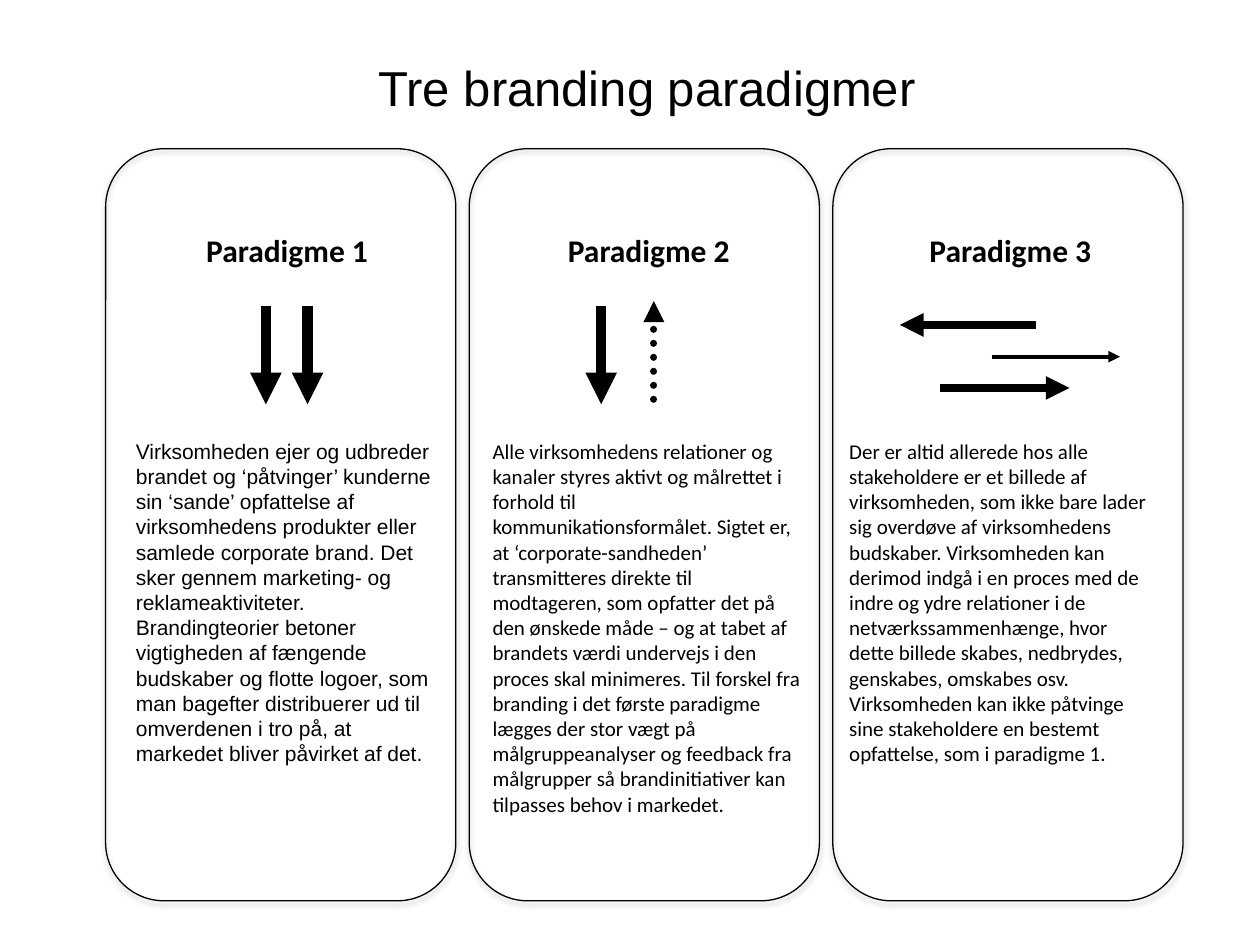
from lxml.etree import SubElement
from pptx import Presentation
from pptx.dml.color import RGBColor
from pptx.enum.dml import MSO_LINE
from pptx.enum.shapes import MSO_CONNECTOR, MSO_SHAPE
from pptx.enum.text import MSO_ANCHOR, PP_ALIGN
from pptx.oxml.ns import qn
from pptx.util import Cm, Pt

HUES = {"ink": "000000"}

TEXTS = [
    ("Arial", [
        "Virksomheden ejer og udbreder brandet og ‘påtvinger’ kunderne sin ‘sande’ "
        "opfattelse af virksomhedens produkter eller samlede corporate brand. Det sker "
        "gennem marketing- og reklameaktiviteter. Brandingteorier betoner vigtigheden "
        "af fængende budskaber og flotte logoer, som",
        "man bagefter distribuerer ud til omverdenen i tro på, at markedet bliver "
        "påvirket af det."]),
    ("Calibri", [
        "Alle virksomhedens relationer og kanaler styres aktivt og målrettet i forhold "
        "til kommunikationsformålet. Sigtet er, at ‘corporate-sandheden’ transmitteres "
        "direkte til modtageren, som opfatter det på den ønskede måde – og at tabet af "
        "brandets værdi undervejs i den proces skal minimeres. Til forskel fra branding "
        "i det første paradigme lægges der stor vægt på målgruppeanalyser og feedback "
        "fra målgrupper så brandinitiativer kan tilpasses behov i markedet."]),
    ("Calibri", [
        "Der er altid allerede hos alle stakeholdere er et billede af virksomheden, som "
        "ikke bare lader sig overdøve af virksomhedens budskaber. Virksomheden kan "
        "derimod indgå i en proces med de indre og ydre relationer i de "
        "netværkssammenhænge, hvor dette billede skabes, nedbrydes, genskabes, omskabes "
        "osv. Virksomheden kan ikke påtvinge sine stakeholdere en bestemt opfattelse, "
        "som i paradigme 1."]),
]


def color(name):
    return RGBColor.from_string(HUES[name])


def write(frame, lines, font="Calibri", size=12, bold=False, align=PP_ALIGN.LEFT):
    """Fill a text frame with one paragraph per line."""
    for i, line in enumerate(lines):
        para = frame.paragraphs[0] if i == 0 else frame.add_paragraph()
        para.alignment = align
        run = para.add_run()
        run.text = line
        run.font.name = font
        run.font.size = Pt(size)
        run.font.bold = bold
        run.font.color.rgb = color("ink")


class Pen:
    """Holds the line style and the slide being drawn; lengths are in cm."""

    def __init__(self, slide, hue="ink"):
        self.shapes = slide.shapes
        self.hue = hue

    def stroke(self, shape, width):
        shape.line.color.rgb = color(self.hue)
        shape.line.width = Pt(width)

    def panel(self, x, y, w, h):
        box = self.shapes.add_shape(MSO_SHAPE.ROUNDED_RECTANGLE, Cm(x), Cm(y), Cm(w), Cm(h))
        box.fill.background()
        self.stroke(box, 0.75)
        box.shadow.inherit = False
        effects = box.element.spPr.find(qn("a:effectLst"))
        shade = SubElement(effects, qn("a:outerShdw"), blurRad=str(Pt(3.1)),
                           dist=str(Pt(1.8)), dir="5400000", rotWithShape="0")
        tone = SubElement(shade, qn("a:srgbClr"), val=HUES[self.hue])
        SubElement(tone, qn("a:alpha"), val="35000")

    def text(self, x, y, w, h, lines, anchor=MSO_ANCHOR.TOP, **style):
        frame = self.shapes.add_textbox(Cm(x), Cm(y), Cm(w), Cm(h)).text_frame
        frame.word_wrap = True
        frame.vertical_anchor = anchor
        write(frame, lines, **style)

    def arrow(self, x1, y1, x2, y2, width, dotted=False):
        line = self.shapes.add_connector(MSO_CONNECTOR.STRAIGHT, Cm(x1), Cm(y1), Cm(x2), Cm(y2))
        self.stroke(line, width)
        props = line.element.spPr
        edge = props.find(qn("a:ln"))
        if dotted:
            line.line.dash_style = MSO_LINE.ROUND_DOT
            edge.set("cap", "rnd")
        SubElement(edge, qn("a:tailEnd"), type="triangle")
        SubElement(props, qn("a:effectLst"))


def main():
    deck = Presentation()
    deck.slide_width, deck.slide_height = Cm(25.4), Cm(19.05)
    pen = Pen(deck.slides.add_slide(deck.slide_layouts[6]))

    pen.text(0.43, 1.02, 24.97, 1.45, [" Tre branding paradigmer"], anchor=MSO_ANCHOR.MIDDLE,
             font="Arial", size=28, align=PP_ALIGN.CENTER)
    for i, (font, lines) in enumerate(TEXTS):
        pen.panel(2.13 + 7.33 * i, 3, 7.06, 15.16)
        pen.text(1.93 + 7.29 * i, 4.53, 7.72, 1.02, [f"Paradigme {i + 1}"],
                 size=18, bold=True, align=PP_ALIGN.CENTER)
        pen.text(2.49 + 7.19 * i, 8.71, 6.71, 7, lines, font=font)

    for x in (5.36, 6.2, 12.12):
        pen.arrow(x, 6.17, x, 8.15, 6)
    pen.arrow(13.18, 8.05, 13.18, 6.07, 4, dotted=True)
    for start, end, y, width in ((20.88, 18.14, 6.55, 4.5),
                                 (19.99, 22.58, 7.19, 2.25),
                                 (18.95, 21.56, 7.82, 4.5)):
        pen.arrow(start, y, end, y, width)

    deck.save("out.pptx")


if __name__ == "__main__":
    main()
